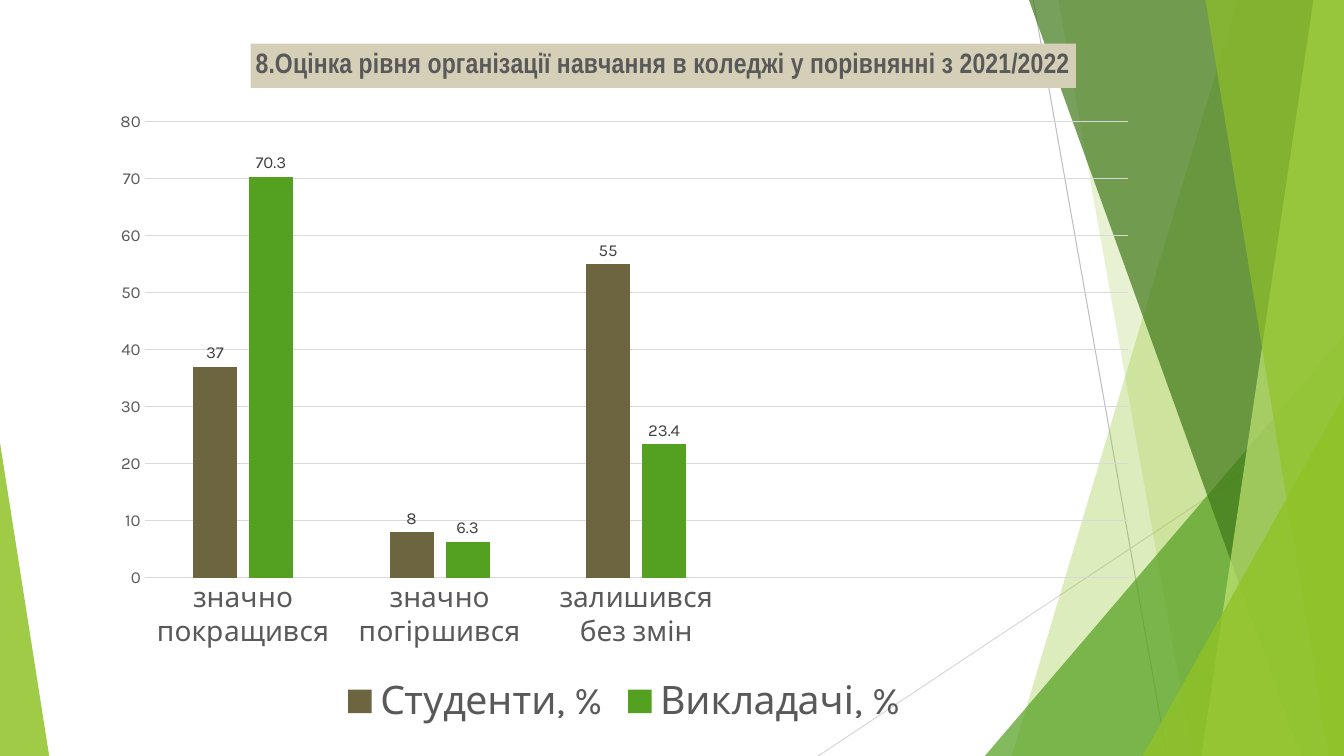
"""Build the slide comparing how students and teachers rate the organisation of learning."""
from lxml import etree
from pptx import Presentation
from pptx.chart.data import CategoryChartData
from pptx.dml.color import RGBColor
from pptx.enum.chart import XL_CHART_TYPE, XL_LABEL_POSITION, XL_LEGEND_POSITION, XL_TICK_MARK
from pptx.enum.shapes import MSO_CONNECTOR, MSO_SHAPE
from pptx.oxml import parse_xml
from pptx.oxml.ns import nsdecls, qn
from pptx.util import Cm, Pt

COLUMNS = XL_CHART_TYPE.COLUMN_CLUSTERED
OUTSIDE = XL_LABEL_POSITION.OUTSIDE_END
BOTTOM = XL_LEGEND_POSITION.BOTTOM
NO_TICK = XL_TICK_MARK.NONE
STRAIGHT = MSO_CONNECTOR.STRAIGHT
TRIANGLE = MSO_SHAPE.ISOSCELES_TRIANGLE

WIDTH, HEIGHT = 33.87, 19.05
BLANK_LAYOUT = 6
GRID, TEXT = "D9D9D9", "595959"
LIME, GREEN, PALE, FOREST = "90C226", "54A021", "C0E474", "3F7819"

RAYS = [((26.04, 0), (29.41, HEIGHT), "BFBFBF"), ((WIDTH, 10.24), (20.62, HEIGHT), GRID)]
BACK_BANDS = [(31.19, 25.5, LIME, 30), (26.67, 30.05, LIME, 20)]
FRONT_BANDS = [(25.93, 32.79, FOREST, 70), (33.1, 30.28, PALE, 70), (30.38, 33.48, LIME, 65)]
BACK_WEDGE = (24.82, 8.46, WIDTH - 24.82, 1, GREEN, 72)
FRONT_WEDGES = [(28.8, 9.98, WIDTH - 28.8, 1, LIME, 80), (0, 11.15, 1.24, 0, LIME, 85)]

QUESTION = "8.Оцінка рівня організації навчання в коледжі у порівнянні з 2021/2022"
ANSWERS = ["значно покращився", "значно погіршився", "залишився без змін", "", ""]
RATINGS = [
    ("Студенти, %", (37, 8, 55, None, None), "6D6540"),
    ("Викладачі, %", (70.3, 6.3, 23.4, None, None), GREEN),
]


def rgb(code):
    """Turn a hex string into a colour."""
    return RGBColor.from_string(code)


def assign(target, values):
    """Set every attribute named in values on the target."""
    for attribute, value in values.items():
        setattr(target, attribute, value)


def style_font(font, size, color=TEXT, name="Karla", bold=False):
    """Format a font."""
    assign(font, {"size": Pt(size), "name": name, "bold": bold})
    font.color.rgb = rgb(color)


def style_line(line, color):
    """Draw a thin line in one colour."""
    line.color.rgb = rgb(color)
    line.width = Pt(0.75)


def place(element, index, **position):
    """Give a chart part a manual layout."""
    for previous in element.findall(qn("c:layout")):
        element.remove(previous)
    entries = "".join(f'<c:{key} val="{value}"/>' for key, value in position.items())
    element.insert(index, parse_xml(
        f'<c:layout {nsdecls("c")}><c:manualLayout>{entries}</c:manualLayout></c:layout>'))


class SlideBuilder:
    """Hold the current slide and draw its elements."""

    def __init__(self, slide):
        """Remember the slide to draw on."""
        self.shapes = slide.shapes

    def tint(self, shape, color, opacity):
        """Fill a shape with a translucent colour and no outline."""
        shape.shadow.inherit = False
        shape.line.fill.background()
        shape.fill.solid()
        shape.fill.fore_color.rgb = rgb(color)
        color_node = shape.fill._xPr.find(qn("a:solidFill"))[0]
        etree.SubElement(color_node, qn("a:alpha")).set("val", str(opacity * 1000))

    def ray(self, start, end, color):
        """Draw a thin straight line."""
        connector = self.shapes.add_connector(STRAIGHT, *map(Cm, start + end))
        style_line(connector.line, color)
        etree.SubElement(connector._element.spPr, qn("a:effectLst"))

    def band(self, top_x, bottom_x, color, opacity):
        """Draw a slanted band that reaches the right edge."""
        outline = self.shapes.build_freeform(Cm(top_x), Cm(0))
        corners = [(WIDTH, 0), (WIDTH, HEIGHT), (bottom_x, HEIGHT)]
        outline.add_line_segments([(Cm(x), Cm(y)) for x, y in corners], close=True)
        self.tint(outline.convert_to_shape(), color, opacity)

    def wedge(self, left, top, width, apex, color, opacity):
        """Draw a right triangle standing on the bottom edge."""
        triangle = self.shapes.add_shape(TRIANGLE, *map(Cm, (left, top, width, HEIGHT - top)))
        triangle.adjustments[0] = apex
        self.tint(triangle, color, opacity)

    def ratings_chart(self, left, top, width, height):
        """Draw the column chart of ratings."""
        data = CategoryChartData()
        data.categories = ANSWERS
        for name, values, _ in RATINGS:
            data.add_series(name, values)
        chart = self.shapes.add_chart(COLUMNS, *map(Cm, (left, top, width, height)), data).chart
        style_font(chart.font, 10, "000000")
        self.chart_title(chart)
        self.chart_axes(chart)
        self.chart_columns(chart.plots[0])
        chart.has_legend = True
        assign(chart.legend, {"position": BOTTOM, "include_in_layout": False})
        style_font(chart.legend.font, 28)
        place(chart._chartSpace.chart.plotArea, 0, layoutTarget="inner", xMode="edge",
              yMode="edge", x=0.043, y=0.124, w=0.937, h=0.655)

    def chart_title(self, chart):
        """Write the survey question on a filled strip."""
        chart.has_title = True
        title = chart.chart_title
        title.include_in_layout = False
        title.text_frame.text = QUESTION
        style_font(title.text_frame.paragraphs[0].runs[0].font, 20, name="Arial Narrow", bold=True)
        title.format.fill.solid()
        title.format.fill.fore_color.rgb = rgb("D6CFB7")
        place(title._element, 1, xMode="edge", yMode="edge", x=0.144, y=0.012)

    def chart_axes(self, chart):
        """Format both axes and the grid."""
        for axis, size in ((chart.category_axis, 20), (chart.value_axis, 12)):
            assign(axis, {"major_tick_mark": NO_TICK, "minor_tick_mark": NO_TICK})
            style_font(axis.tick_labels.font, size)
        style_line(chart.category_axis.format.line, GRID)
        scale = chart.value_axis
        assign(scale, {"minimum_scale": 0, "maximum_scale": 80, "major_unit": 10})
        scale.format.line.fill.background()
        style_line(scale.major_gridlines.format.line, GRID)

    def chart_columns(self, plot):
        """Colour the columns and label their values."""
        assign(plot, {"gap_width": 219, "overlap": -27, "vary_by_categories": False})
        for series, (_, _, color) in zip(plot.series, RATINGS):
            series.format.fill.solid()
            series.format.fill.fore_color.rgb = rgb(color)
            assign(series.data_labels, {"show_value": True, "position": OUTSIDE})
            style_font(series.data_labels.font, 12, "404040")


def main():
    """Build and save the presentation."""
    presentation = Presentation()
    assign(presentation, {"slide_width": Cm(WIDTH), "slide_height": Cm(HEIGHT)})
    layout = presentation.slide_layouts[BLANK_LAYOUT]
    builder = SlideBuilder(presentation.slides.add_slide(layout))
    for ray in RAYS:
        builder.ray(*ray)
    for band in BACK_BANDS:
        builder.band(*band)
    builder.wedge(*BACK_WEDGE)
    for band in FRONT_BANDS:
        builder.band(*band)
    for wedge in FRONT_WEDGES:
        builder.wedge(*wedge)
    builder.ratings_chart(2.51, 0.89, 26.44, 17.55)
    presentation.save("out.pptx")


if __name__ == "__main__":
    main()
